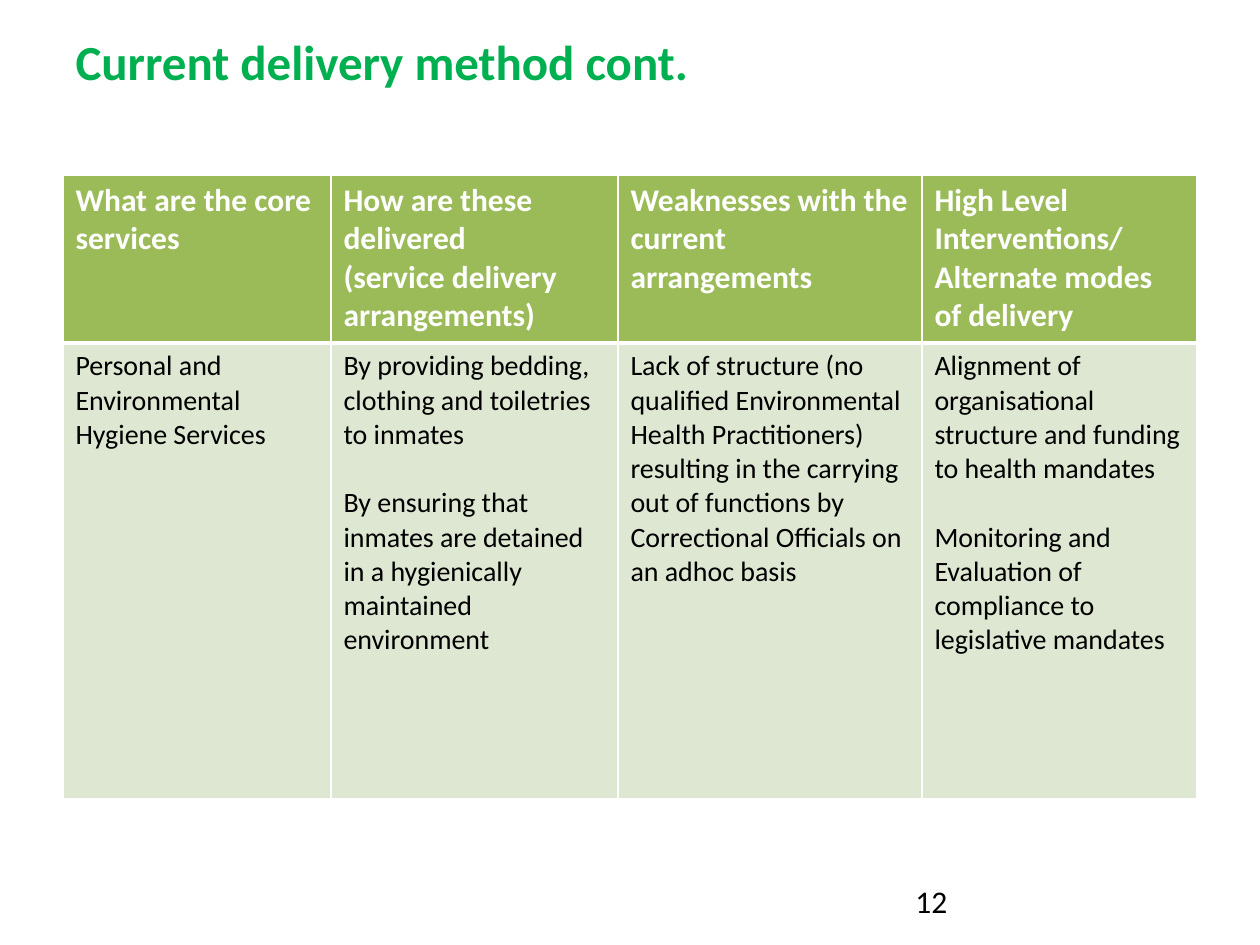
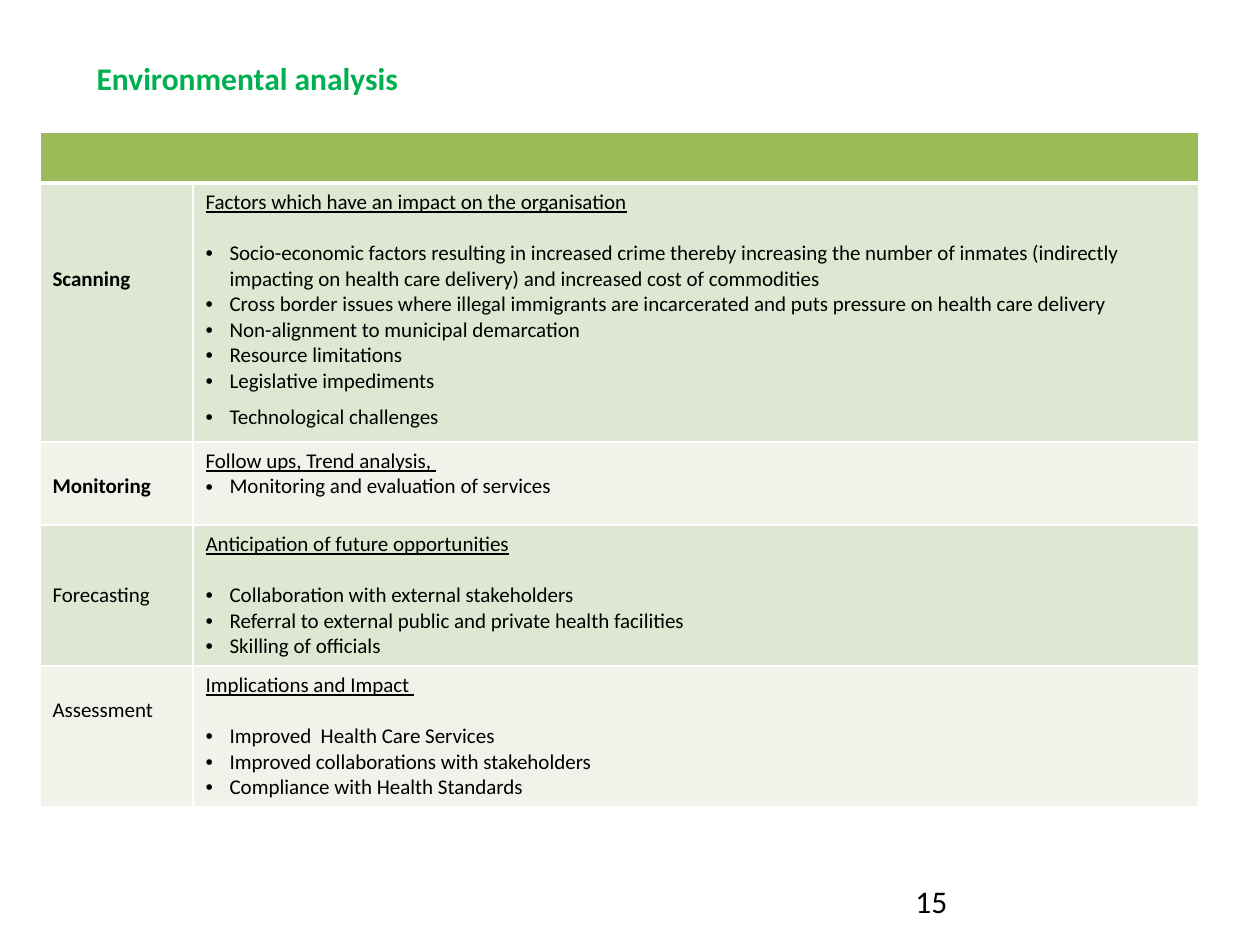
from dataclasses import dataclass
from lxml import etree
from pptx import Presentation
from pptx.dml.color import RGBColor
from pptx.enum.text import MSO_ANCHOR, MSO_AUTO_SIZE, PP_ALIGN
from pptx.oxml.ns import qn
from pptx.util import Emu, Pt

LEFT, TOP, NO_FIT = PP_ALIGN.LEFT, MSO_ANCHOR.TOP, MSO_AUTO_SIZE.NONE
SCALE = 914400 / 126  # EMU in one px


@dataclass(frozen=True)
class Theme:
    font: str = "Calibri"
    title: str = "00B050"
    head: str = "9BBB59"
    dark: str = "DEE7D1"
    light: str = "EFF3EA"
    white: str = "FFFFFF"
    black: str = "000000"
    big: int = 28
    mid: int = 18
    body: int = 16
    small: int = 12


THEME = Theme()

# Content of the delivery slide: each cell is a list of paragraphs
HEADS = [
    ["What are the core services"],
    ["How are these delivered", "(service delivery arrangements)"],
    ["Weaknesses with the current arrangements"],
    ["High Level Interventions/ Alternate modes of delivery"],
]
CELLS = [
    ["Personal and Environmental Hygiene Services"],
    ["By providing bedding, clothing and toiletries to inmates",
     "By ensuring that  inmates are detained in a hygienically maintained "
     "environment"],
    ["Lack of structure (no qualified Environmental Health Practitioners) "
     "resulting in the carrying out of functions by Correctional Officials "
     "on an adhoc basis"],
    ["Alignment of organisational structure and funding to health mandates",
     "Monitoring and Evaluation of compliance to legislative mandates"],
]

# Content of the analysis slide:
# label, bold, label drop in lines, heading, gap in lines, bullets, loose bullets
STEPS = [
    ("Scanning", True, 3, "Factors which have an impact on the organisation", 1, [
        "Socio-economic factors resulting in increased crime thereby increasing "
        "the number of inmates (indirectly impacting on health care delivery) "
        "and increased cost of commodities",
        "Cross border issues where illegal immigrants are incarcerated and puts "
        "pressure on health care delivery",
        "Non-alignment to municipal demarcation",
        "Resource limitations",
        "Legislative impediments",
        "Technological challenges"], 2),
    ("Monitoring", True, 1, "Follow ups, Trend analysis, ", 0, [
        "Monitoring and evaluation of services"], 0),
    ("Forecasting", False, 2, "Anticipation of future opportunities", 1, [
        "Collaboration with external stakeholders",
        "Referral to external public and private health facilities",
        "Skilling of officials"], 0),
    ("Assessment", False, 1, "Implications and Impact ", 1, [
        "Improved  Health Care Services",
        "Improved collaborations with stakeholders",
        "Compliance with Health Standards"], 0),
]

# Places in px: left, top, width, height
PAGE_BOX = (903, 876, 294, 50)
GRID_1 = (63, 175, [268, 287, 304, 275], [168, 456])
GRID_2 = (40, 132, [153, 1006], [51, 259, 83, 141, 140])
INDENT = 24
LINE = 1.22  # line height as a share of the type size


def px(n):
    return Emu(round(n * SCALE))


def style(para, size, color=THEME.black, bold=False, under=False):
    para.alignment = LEFT
    for run in para.runs:
        font = run.font
        font.name, font.size, font.bold = THEME.font, Pt(size), bold
        font.underline = under
        font.color.rgb = RGBColor.from_string(color)


def place(shape, box):
    shape.left, shape.top, shape.width, shape.height = map(px, box)


def start(deck, title, box, size, page):
    """Add a slide with its title and page number."""
    slide = deck.slides.add_slide(deck.slide_layouts[5])
    head = slide.shapes.title
    place(head, box)
    note = slide.shapes.add_textbox(*map(px, PAGE_BOX))
    for shape, text in ((head, title), (note, page)):
        frame = shape.text_frame
        frame.text = text
        frame.word_wrap, frame.auto_size = True, NO_FIT
        frame.vertical_anchor = TOP
    style(head.text_frame.paragraphs[0], size, THEME.title, True)
    style(note.text_frame.paragraphs[0], THEME.mid)
    return slide


def edge(cell, side, width):
    line = etree.SubElement(cell._tc.get_or_add_tcPr(), qn("a:ln" + side),
                            w=str(Pt(width)))
    fill = etree.SubElement(line, qn("a:solidFill"))
    etree.SubElement(fill, qn("a:srgbClr"), val=THEME.white)


def grid(slide, left, top, cols, rows):
    """Add a table with white rules, a green head and banded rows."""
    frame = slide.shapes.add_table(
        len(rows), len(cols), *map(px, (left, top, sum(cols), sum(rows))))
    table = frame.table
    table.first_row = table.horz_banding = False
    for col, width in zip(table.columns, cols):
        col.width = px(width)
    for r, height in enumerate(rows):
        table.rows[r].height = px(height)
        band = THEME.dark if r % 2 else THEME.light
        for cell in table.rows[r].cells:
            for side in "LRTB":
                thick = (r, side) in ((0, "B"), (1, "T"))
                edge(cell, side, 3 if thick else 1)
            cell.fill.solid()
            cell.fill.fore_color.rgb = RGBColor.from_string(band if r else THEME.head)
    return table


def write(cell, lines, size, gap=0, **look):
    """Fill a cell with paragraphs, with a gap of some lines between them."""
    cell.text_frame.text = "\n".join(lines)
    paras = cell.text_frame.paragraphs
    for para in paras:
        style(para, size, **look)
    for para in paras[:-1]:
        para.space_after = Pt(round(gap * size * LINE, 1))
    return paras


def bullet(para):
    props = para._p.get_or_add_pPr()
    props.set("marL", str(px(INDENT)))
    props.set("indent", str(-px(INDENT)))
    etree.SubElement(props, qn("a:buFont"), typeface="Arial")
    etree.SubElement(props, qn("a:buChar"), char="•")


def delivery(deck):
    slide = start(deck, "Current delivery method cont.", (63, 25, 1134, 72),
                  THEME.big, "12")
    table = grid(slide, *GRID_1)
    for c, (head, lines) in enumerate(zip(HEADS, CELLS)):
        write(table.cell(0, c), head, THEME.mid, color=THEME.white, bold=True)
        write(table.cell(1, c), lines, THEME.body, 1)


def analysis(deck):
    slide = start(deck, "Environmental analysis", (84, 53, 445, 50),
                  THEME.mid, "15")
    table = grid(slide, *GRID_2)
    table.cell(0, 0).merge(table.cell(0, 1))
    size = THEME.small
    for r, (label, bold, drop, head, gap, items, loose) in enumerate(STEPS, 1):
        name, text = table.rows[r].cells
        write(name, [label], size, bold=bold)
        name.margin_top += Pt(drop * size * LINE)
        first, *rest = write(text, [head, *items], size)
        style(first, size, under=True)
        first.space_after = Pt(round(gap * size * LINE, 1))
        for i, para in enumerate(rest):
            if i >= len(rest) - loose:
                para.space_after = Pt(6)
            bullet(para)


def main():
    deck = Presentation()
    deck.slide_width, deck.slide_height = px(1260), px(945)
    delivery(deck)
    analysis(deck)
    deck.save("out.pptx")


if __name__ == "__main__":
    main()
